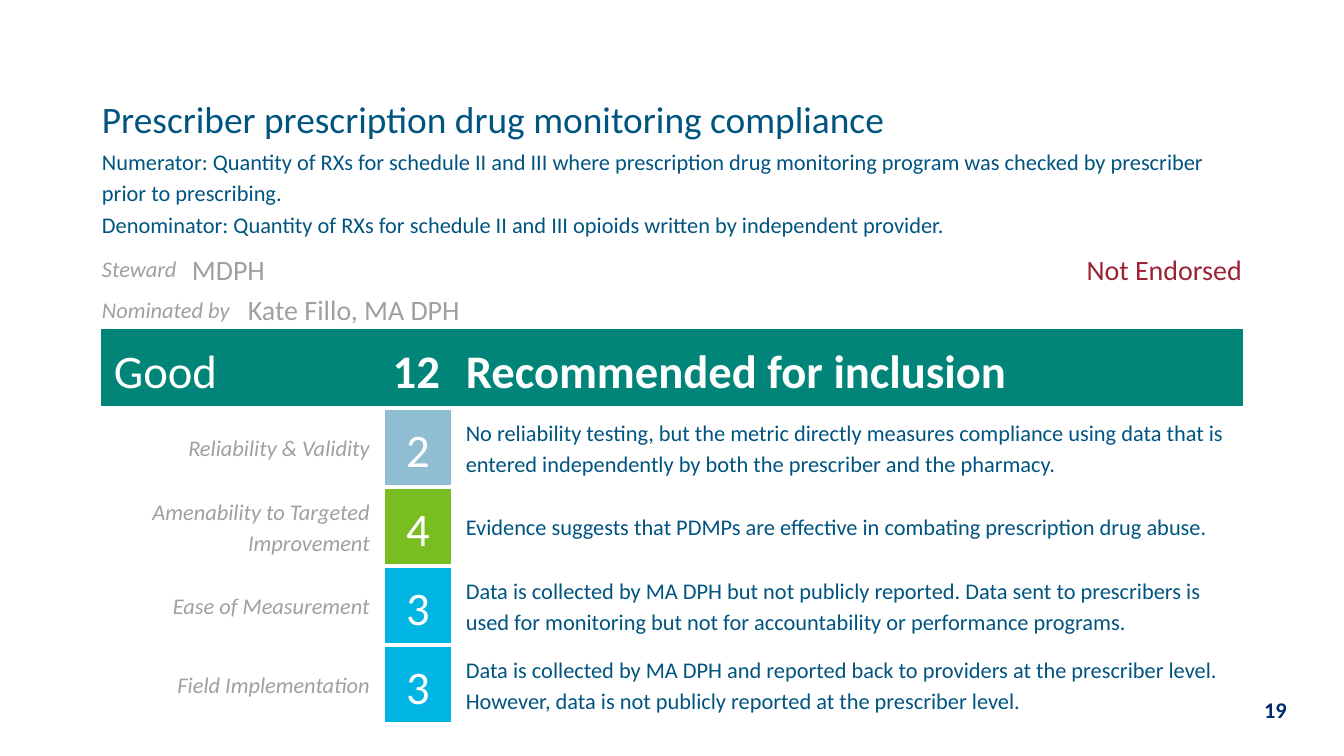
from dataclasses import dataclass

from lxml.etree import SubElement
from pptx import Presentation
from pptx.dml.color import RGBColor
from pptx.enum.text import MSO_ANCHOR, PP_ALIGN
from pptx.oxml.ns import qn
from pptx.util import Pt

PX = 914400 / 134.4  # EMU in one px


@dataclass(frozen=True)
class Theme:
    font: str = "Calibri"
    navy: str = "002B69"
    blue: str = "005480"
    gray: str = "A0A0A4"
    red: str = "9D2235"
    white: str = "FFFFFF"
    banner: str = "008578"
    title: int = 20
    body: int = 12
    detail: int = 15
    score: int = 25
    border: float = 2.25


THEME = Theme()
SCORE_COLORS = {2: "8FBDD1", 3: "00B5E2", 4: "78BE20"}
NO_STYLE_NO_GRID = "{2D5ABB26-0587-4C30-8999-92F81FD0307C}"

COLUMNS = [90, 56, 94, 42, 70, 443, 347]
HEADER_ROWS = [55, 103, 41, 41]
RATING_ROW = 79

# Cell insets in px: left, top, right, bottom
FLUSH_LEFT = (1, 1, 13, 0)
FLUSH_RIGHT = (13, 1, 1, 0)
DESCRIPTION_INSETS = (1, 1, 13, 7)
PADDED = (13, 7, 13, 7)

DESCRIPTION = (
    "Numerator: Quantity of RXs for schedule II and III where prescription drug "
    "monitoring program was checked by prescriber prior to prescribing.\n"
    "Denominator: Quantity of RXs for schedule II and III opioids written by "
    "independent provider."
)
RATINGS = [
    ("Reliability & Validity", 2,
     "No reliability testing, but the metric directly measures compliance using data "
     "that is entered independently by both the prescriber and the pharmacy."),
    ("Amenability to Targeted Improvement", 4,
     "Evidence suggests that PDMPs are effective in combating prescription drug abuse."),
    ("Ease of Measurement", 3,
     "Data is collected by MA DPH but not publicly reported. Data sent to prescribers "
     "is used for monitoring but not for accountability or performance programs."),
    ("Field Implementation", 3,
     "Data is collected by MA DPH and reported back to providers at the prescriber "
     "level. However, data is not publicly reported at the prescriber level."),
]


def px(length):
    return round(length * PX)


def write(frame, text, size, color, align=PP_ALIGN.LEFT, bold=False, italic=False,
          spacing=1.15):
    frame.text = text
    for paragraph in frame.paragraphs:
        paragraph.alignment = align
        paragraph.line_spacing = spacing
        for run in paragraph.runs:
            run.font.name = THEME.font
            run.font.size = Pt(size)
            run.font.bold = bold
            run.font.italic = italic
            run.font.color.rgb = RGBColor.from_string(color)


def add_borders(cell):
    properties = cell._tc.get_or_add_tcPr()
    for side in ("a:lnL", "a:lnR", "a:lnT", "a:lnB"):
        line = SubElement(properties, qn(side), w=str(Pt(THEME.border)))
        fill = SubElement(line, qn("a:solidFill"))
        SubElement(fill, qn("a:srgbClr"), val=THEME.white)


def fill_cell(table, row, first, last, text, size, color, insets=PADDED, fill=None,
              anchor=MSO_ANCHOR.MIDDLE, **style):
    """Write one cell that spans the columns first to last."""
    cell = table.cell(row, first)
    if last > first:
        cell.merge(table.cell(row, last))
    cell.margin_left, cell.margin_top, cell.margin_right, cell.margin_bottom = map(px, insets)
    cell.vertical_anchor = anchor
    if fill:
        cell.fill.solid()
        cell.fill.fore_color.rgb = RGBColor.from_string(fill)
    else:
        cell.fill.background()
    write(cell.text_frame, text, size, color, **style)


def add_scorecard(slide):
    heights = HEADER_ROWS + [RATING_ROW] * (1 + len(RATINGS))
    frame = slide.shapes.add_table(len(heights), len(COLUMNS), px(101), px(89),
                                   px(sum(COLUMNS)), px(sum(heights)))
    table = frame.table
    table.first_row = table.horz_banding = False
    table._tbl.tblPr.find(qn("a:tableStyleId")).text = NO_STYLE_NO_GRID
    for column, width in zip(table.columns, COLUMNS):
        column.width = px(width)
    for row, height in zip(table.rows, heights):
        row.height = px(height)
    return table


def fill_header(table):
    t = THEME
    fill_cell(table, 0, 0, 6, "Prescriber prescription drug monitoring compliance",
              t.title, t.blue, FLUSH_LEFT)
    fill_cell(table, 1, 0, 6, DESCRIPTION, t.body, t.blue, DESCRIPTION_INSETS,
              anchor=MSO_ANCHOR.TOP)
    fill_cell(table, 2, 0, 0, "Steward", t.body, t.gray, FLUSH_LEFT, italic=True)
    fill_cell(table, 2, 1, 5, "MDPH", t.detail, t.gray, FLUSH_LEFT)
    fill_cell(table, 2, 6, 6, "Not Endorsed", t.detail, t.red, FLUSH_RIGHT,
              align=PP_ALIGN.RIGHT)
    fill_cell(table, 3, 0, 1, "Nominated by", t.body, t.gray, FLUSH_LEFT, italic=True)
    fill_cell(table, 3, 2, 6, "Kate Fillo, MA DPH", t.detail, t.gray, FLUSH_LEFT)


def fill_banner(table, row):
    t = THEME
    total = sum(score for _, score, _ in RATINGS)
    fill_cell(table, row, 0, 2, "Good", t.score, t.white, fill=t.banner)
    fill_cell(table, row, 3, 4, str(total), t.score, t.white, fill=t.banner,
              align=PP_ALIGN.RIGHT, bold=True)
    fill_cell(table, row, 5, 6, "Recommended for inclusion", t.score, t.white,
              fill=t.banner, bold=True)


def fill_rating(table, row, criterion, score, reason):
    t = THEME
    for column in range(len(COLUMNS)):
        add_borders(table.cell(row, column))
    fill_cell(table, row, 0, 3, criterion, t.body, t.gray, align=PP_ALIGN.RIGHT, italic=True)
    fill_cell(table, row, 4, 4, str(score), t.score, t.white, fill=SCORE_COLORS[score],
              align=PP_ALIGN.CENTER)
    fill_cell(table, row, 5, 6, reason, t.body, t.blue)


def add_page_number(slide, number):
    frame = slide.shapes.add_textbox(px(1020), px(696), px(280), px(27)).text_frame
    frame.word_wrap = True
    frame.vertical_anchor = MSO_ANCHOR.MIDDLE
    write(frame, number, THEME.body, THEME.navy, PP_ALIGN.RIGHT, bold=True, spacing=1.0)


def main():
    presentation = Presentation()
    presentation.slide_width, presentation.slide_height = px(1344), px(756)
    slide = presentation.slides.add_slide(presentation.slide_layouts[6])

    add_page_number(slide, "19")

    # Scorecard: header, overall result, one row for each criterion
    scorecard = add_scorecard(slide)
    fill_header(scorecard)
    banner_row = len(HEADER_ROWS)
    fill_banner(scorecard, banner_row)
    for row, rating in enumerate(RATINGS, banner_row + 1):
        fill_rating(scorecard, row, *rating)

    presentation.save("out.pptx")


if __name__ == "__main__":
    main()
